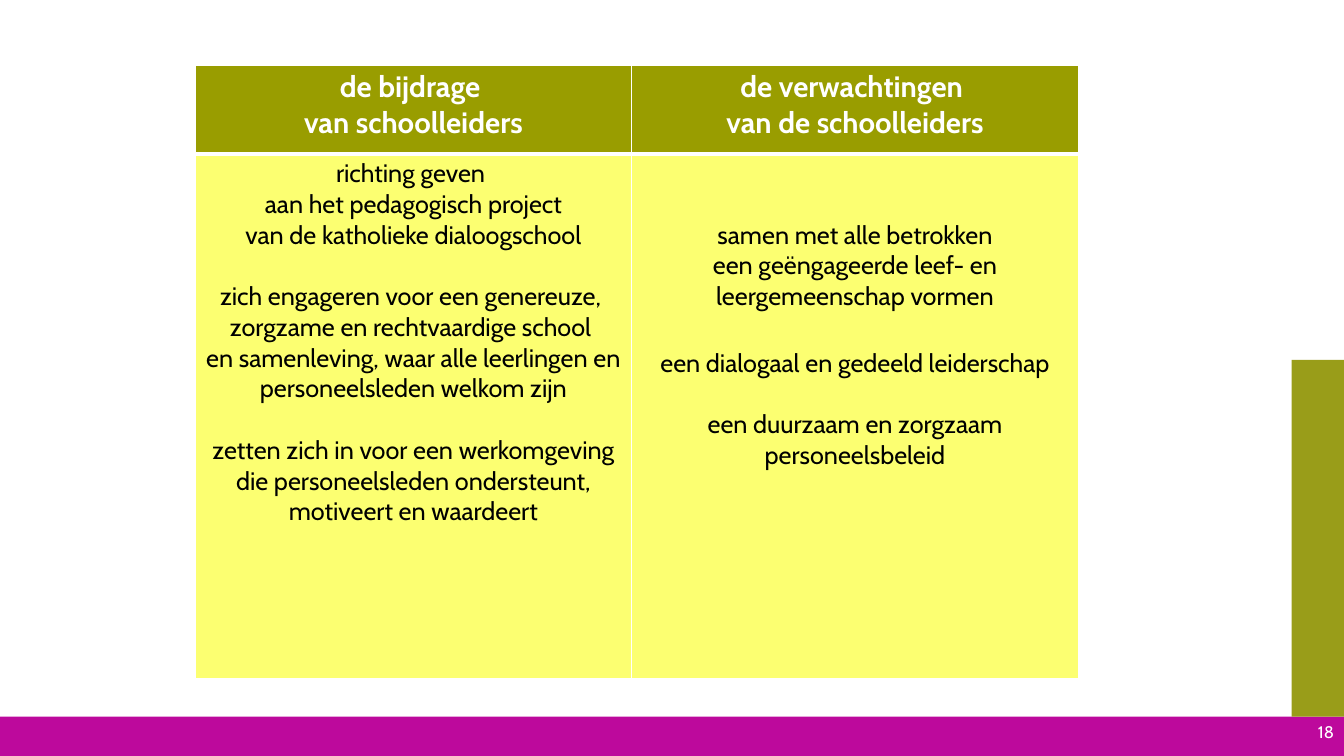
from dataclasses import dataclass

import pptx
import pptx.dml.color
import pptx.enum.shapes
import pptx.enum.text
import pptx.oxml
import pptx.oxml.ns
import pptx.slide
import pptx.table
import pptx.text.text
import pptx.util

RGBColor = pptx.dml.color.RGBColor
Inches = pptx.util.Inches
Pt = pptx.util.Pt
PP_ALIGN = pptx.enum.text.PP_ALIGN
MSO_ANCHOR = pptx.enum.text.MSO_ANCHOR

WHITE = RGBColor(0xFF, 0xFF, 0xFF)
BLACK = RGBColor(0, 0, 0)
MAGENTA = RGBColor(0xBD, 0x09, 0x9C)
OLIVE_BAR = RGBColor(0x99, 0x9D, 0x19)
OLIVE_HEADER = RGBColor(0x99, 0x9D, 0x00)
YELLOW = RGBColor(0xFC, 0xFF, 0x71)

HEADER_FONT = {"name": "Cabin", "size": Pt(21), "bold": True}
BODY_FONT = {"name": "Cabin", "size": Pt(18), "bold": False}
PAGE_FONT = {"name": "Cabin", "size": Pt(12)}
CELL_FORMAT = {
    "margin_left": Inches(0.07),
    "margin_right": Inches(0.07),
    "margin_top": Inches(0.04),
    "margin_bottom": Inches(0.04),
    "vertical_anchor": MSO_ANCHOR.TOP,
}
BODY_GAP = Pt(22)
WIDE_GAP = Pt(25.7)


@dataclass(frozen=True)
class Bar:
    left: float
    top: float
    width: float
    height: float
    color: RGBColor


@dataclass(frozen=True)
class Line:
    text: str
    gap: int = 0


@dataclass(frozen=True)
class Column:
    width: float
    heading: list[Line]
    points: list[Line]
    body_top: float


BARS = [
    Bar(0, 7.11, 13.33, 0.39, MAGENTA),
    Bar(12.81, 3.57, 0.52, 3.54, OLIVE_BAR),
]
COLUMNS = [
    Column(
        4.32,
        [Line("de bijdrage "), Line("van schoolleiders")],
        [
            Line("richting geven "),
            Line("aan het pedagogisch project"),
            Line("van de katholieke dialoogschool"),
            Line("zich engageren voor een genereuze, ", BODY_GAP),
            Line("zorgzame en rechtvaardige school "),
            Line("en samenleving, waar alle leerlingen en personeelsleden welkom zijn"),
            Line("zetten zich in voor een werkomgeving die personeelsleden "
                 "ondersteunt, motiveert en waardeert", BODY_GAP),
        ],
        0.04,
    ),
    Column(
        4.44,
        [Line("de verwachtingen "), Line("van de schoolleiders")],
        [
            Line("samen met alle betrokken"),
            Line("een geëngageerde leef- en leergemeenschap vormen"),
            Line("een dialogaal en gedeeld leiderschap", WIDE_GAP),
            Line("een duurzaam en zorgzaam personeelsbeleid", BODY_GAP),
        ],
        0.65,
    ),
]
ROW_HEIGHTS = [0.88, 5.2]


def apply_format(target: object, values: dict) -> None:
    for attribute, value in values.items():
        setattr(target, attribute, value)


def write_lines(frame: pptx.text.text.TextFrame, lines: list[Line], font: dict,
                color: RGBColor, alignment: PP_ALIGN) -> None:
    for index, line in enumerate(lines):
        paragraph = frame.paragraphs[0] if index == 0 else frame.add_paragraph()
        paragraph.alignment = alignment
        if line.gap:
            paragraph.space_before = line.gap
        run = paragraph.add_run()
        run.text = line.text
        apply_format(run.font, font)
        run.font.color.rgb = color


def add_borders(cell: pptx.table._Cell, top: float, bottom: float) -> None:
    """Give the cell white borders, with widths in points."""
    properties = cell._tc.get_or_add_tcPr()
    for side, points in {"L": 1, "R": 1, "T": top, "B": bottom}.items():
        properties.append(pptx.oxml.parse_xml(
            f'<a:ln{side} {pptx.oxml.ns.nsdecls("a")} w="{Pt(points)}">'
            f'<a:solidFill><a:srgbClr val="{WHITE}"/></a:solidFill></a:ln{side}>'
        ))


def fill_cell(cell: pptx.table._Cell, lines: list[Line], font: dict,
              color: RGBColor, background: RGBColor) -> None:
    apply_format(cell, CELL_FORMAT)
    cell.fill.solid()
    cell.fill.fore_color.rgb = background
    write_lines(cell.text_frame, lines, font, color, PP_ALIGN.CENTER)


def add_bar(slide: pptx.slide.Slide, bar: Bar) -> None:
    shape = slide.shapes.add_shape(
        pptx.enum.shapes.MSO_SHAPE.RECTANGLE,
        Inches(bar.left), Inches(bar.top), Inches(bar.width), Inches(bar.height))
    shape.shadow.inherit = False
    shape.fill.solid()
    shape.fill.fore_color.rgb = bar.color
    shape.line.fill.background()


def add_page_number(slide: pptx.slide.Slide, number: str) -> None:
    box = slide.shapes.add_textbox(
        Inches(10.33), Inches(7.03), Inches(3), Inches(0.47))
    frame = box.text_frame
    apply_format(frame, {"word_wrap": True, "vertical_anchor": MSO_ANCHOR.MIDDLE})
    write_lines(frame, [Line(number)], PAGE_FONT, WHITE, PP_ALIGN.RIGHT)


def add_leadership_table(slide: pptx.slide.Slide) -> None:
    table = slide.shapes.add_table(
        len(ROW_HEIGHTS), len(COLUMNS), Inches(1.94), Inches(0.65),
        Inches(sum(column.width for column in COLUMNS)),
        Inches(sum(ROW_HEIGHTS))).table
    for row, height in zip(table.rows, ROW_HEIGHTS):
        row.height = Inches(height)
    for index, column in enumerate(COLUMNS):
        table.columns[index].width = Inches(column.width)
        heading, body = table.cell(0, index), table.cell(1, index)
        add_borders(heading, top=1, bottom=3)
        add_borders(body, top=3, bottom=1)
        fill_cell(heading, column.heading, HEADER_FONT, WHITE, OLIVE_HEADER)
        fill_cell(body, column.points, BODY_FONT, BLACK, YELLOW)
        body.margin_top = Inches(column.body_top)


def main() -> None:
    presentation = pptx.Presentation()
    presentation.slide_width = Inches(13.33)
    presentation.slide_height = Inches(7.5)
    slide = presentation.slides.add_slide(presentation.slide_layouts[6])
    for bar in BARS:
        add_bar(slide, bar)
    add_page_number(slide, "18")
    add_leadership_table(slide)
    presentation.save("out.pptx")


if __name__ == "__main__":
    main()
